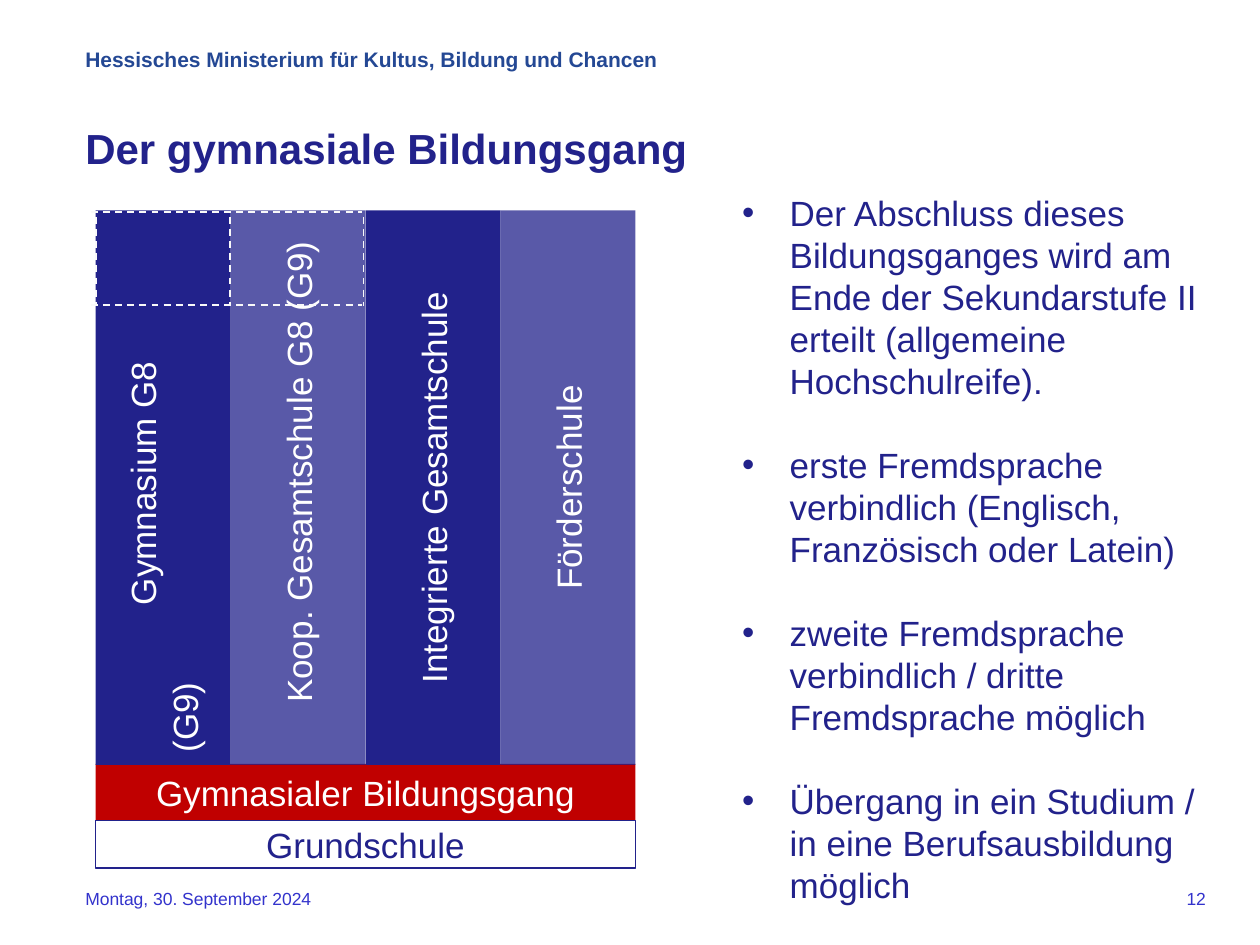
import pptx
import pptx.util
import pptx.dml.color
import pptx.enum.dml
import pptx.enum.shapes
import pptx.enum.text
import pptx.oxml.ns
from lxml import etree

Cm, Pt = pptx.util.Cm, pptx.util.Pt
Align = pptx.enum.text.PP_ALIGN
qn = pptx.oxml.ns.qn

NAVY, WHITE, RED, DASH = "22228B", "FFFFFF", "C00000", "F9F9F9"
HEAD, FOOT = "244894", "3333CC"

LABELS = [
    ("Hessisches Ministerium für Kultus, Bildung und Chancen",
     (1.47, 0.81, 14, 0.86), 12, HEAD, True, Align.LEFT),
    ("Der gymnasiale Bildungsgang",
     (1.47, 2.34, 21.6, 1.5), 24, NAVY, True, Align.LEFT),
    ("Montag, 30. September 2024",
     (1.47, 17.78, 8.18, 1.07), 10, FOOT, False, Align.LEFT),
    ("12", (18.21, 17.78, 6.35, 0.84), 10, FOOT, False, Align.RIGHT),
]
POINTS = [
    "Der Abschluss dieses Bildungsganges wird am Ende der Sekundarstufe II "
    "erteilt (allgemeine Hochschulreife).",
    "erste Fremdsprache verbindlich (Englisch, Französisch oder Latein)",
    "zweite Fremdsprache verbindlich / dritte Fremdsprache möglich",
    "Übergang in ein Studium / in eine Berufsausbildung möglich",
]
SCHOOLS = [
    ("Gymnasium G8\v(G9)", Align.LEFT, 2.97, None),
    ("Koop. Gesamtschule G8\t(G9)", Align.LEFT, 1, 9.25),
    ("Integrierte Gesamtschule", Align.CENTER, 0, None),
    ("Förderschule", Align.CENTER, 0, None),
]
BARS = [
    ("Gymnasialer Bildungsgang", 15.4, 1.14, RED, WHITE, None),
    ("Grundschule", 16.54, 0.96, WHITE, NAVY, NAVY),
]
LEFT, TOP, WIDE, TALL = 1.93, 4.24, 2.72, 11.18


def rgb(code):
    return pptx.dml.color.RGBColor.from_string(code)


def style(para, size, color, bold=False, align=Align.LEFT):
    para.alignment = align
    font = para.font
    font.name, font.size, font.bold = "Arial", Pt(size), bold
    font.color.rgb = rgb(color)


def text(place):
    frame = slide.shapes.add_textbox(*map(Cm, place)).text_frame
    frame.word_wrap = True
    return frame


def block(words, place, fill, color, align=Align.CENTER):
    box = slide.shapes.add_shape(
        pptx.enum.shapes.MSO_SHAPE.RECTANGLE, *map(Cm, place))
    box.shadow.inherit = False
    box.fill.solid()
    box.fill.fore_color.rgb = rgb(fill)
    box.line.fill.background()
    frame = box.text_frame
    frame.word_wrap = True
    frame.vertical_anchor = pptx.enum.text.MSO_ANCHOR.MIDDLE
    para = frame.paragraphs[0]
    para.text = words
    style(para, 20, color, align=align)
    return box


def dash(*ends):
    line = slide.shapes.add_connector(
        pptx.enum.shapes.MSO_CONNECTOR.STRAIGHT, *map(Cm, ends))
    line.line.color.rgb = rgb(DASH)
    line.line.width = Pt(1)
    line.line.dash_style = pptx.enum.dml.MSO_LINE.DASH
    etree.SubElement(line._element.spPr, qn("a:effectLst"))


deck = pptx.Presentation()
deck.slide_width, deck.slide_height = Cm(25.4), Cm(19.05)
slide = deck.slides.add_slide(deck.slide_layouts[6])

for words, place, size, color, bold, align in LABELS:
    para = text(place).paragraphs[0]
    para.text = words
    style(para, size, color, bold, align)

frame = text((14.71, 3.73, 9.8, 14.78))
for i, words in enumerate(POINTS):
    para = frame.add_paragraph() if i else frame.paragraphs[0]
    para.text = words
    para.line_spacing = Pt(24)
    if i:
        para.space_before = Pt(24)
    props = para._p.get_or_add_pPr()
    props.set("marL", str(Cm(0.96)))
    props.set("indent", str(Cm(-0.96)))
    etree.SubElement(props, qn("a:buFont"), typeface="Arial")
    etree.SubElement(props, qn("a:buChar"), char="•")
    style(para, 20, NAVY)

for words, top, tall, fill, color, edge in BARS:
    bar = block(words, (LEFT, top, 4 * WIDE, tall), fill, color)
    if edge:
        bar.line.color.rgb = rgb(edge)
        bar.line.width = Pt(0.75)

for i, (words, align, indent, tab) in enumerate(SCHOOLS):
    box = block(words, (LEFT + i * WIDE, TOP, WIDE, TALL), NAVY, WHITE, align)
    box.text_frame._txBody.bodyPr.set("vert", "vert270")
    props = box.text_frame.paragraphs[0]._p.get_or_add_pPr()
    props.set("indent", str(Cm(indent)))
    if tab:
        stops = etree.Element(qn("a:tabLst"))
        etree.SubElement(stops, qn("a:tab"), pos=str(Cm(tab)), algn="l")
        props.find(qn("a:defRPr")).addprevious(stops)
    if i % 2:
        tint = box._element.spPr.find(qn("a:solidFill"))[0]
        etree.SubElement(tint, qn("a:alpha"), val="75000")

for y in (TOP + 0.03, 6.15):
    for i in range(2):
        start = 1.83 + i * 2.69
        dash(start, y, start + 2.77, y)
for i in range(3):
    x = LEFT + i * 2.7
    dash(x, 4.37, x, 6.17)

deck.save("out.pptx")
